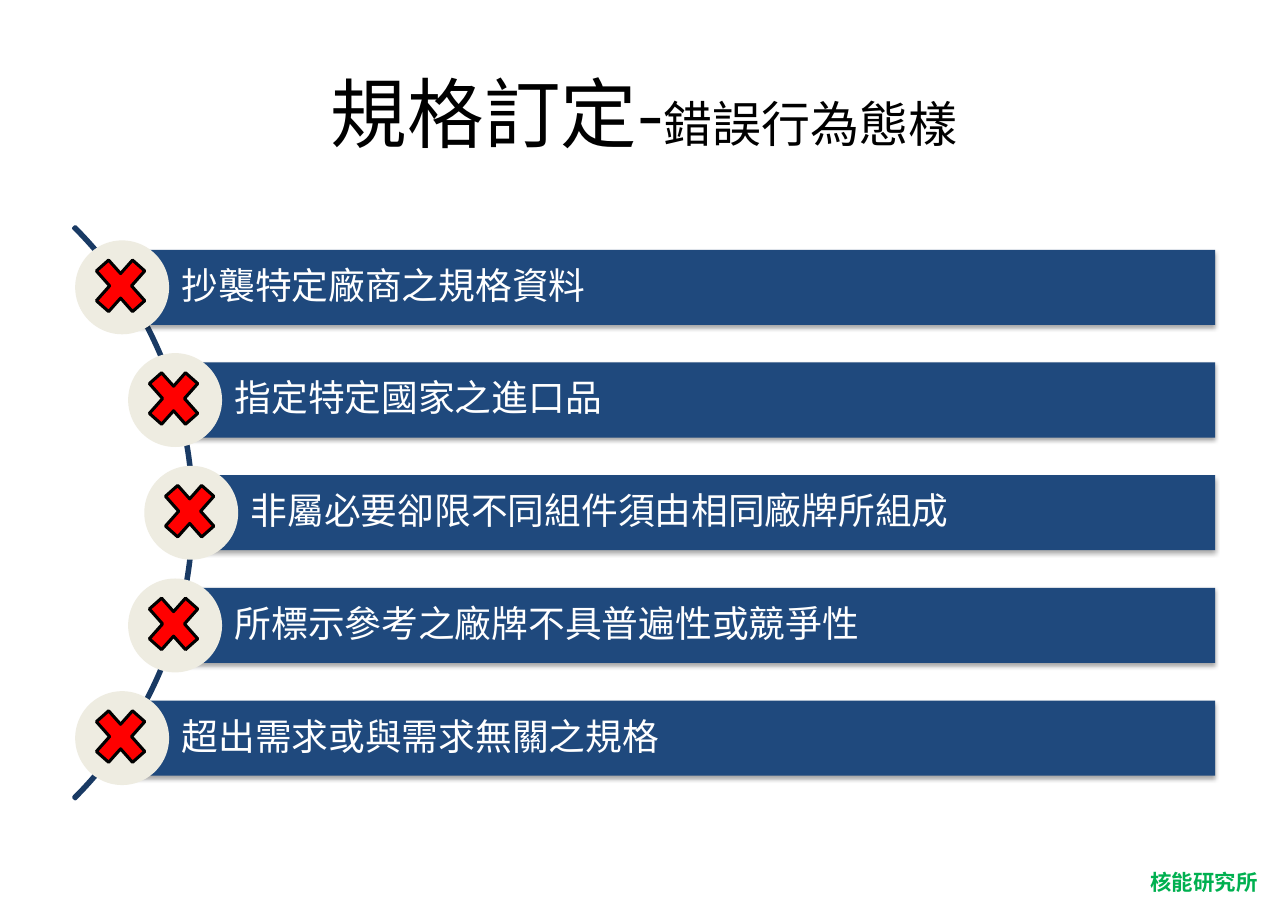
from math import sqrt

from pptx import Presentation
from pptx.dml.color import RGBColor
from pptx.enum.shapes import MSO_SHAPE as Shape
from pptx.enum.text import MSO_ANCHOR as Anchor, MSO_AUTO_SIZE as AutoSize, PP_ALIGN as Align
from pptx.oxml import parse_xml
from pptx.oxml.ns import nsdecls, qn
from pptx.util import Inches, Pt

BLACK = RGBColor(0x00, 0x00, 0x00)
WHITE = RGBColor(0xFF, 0xFF, 0xFF)
NAVY = RGBColor(0x1F, 0x49, 0x7D)
DARK_NAVY = RGBColor(0x19, 0x3A, 0x64)
CREAM = RGBColor(0xEE, 0xEC, 0xE1)
RED = RGBColor(0xFF, 0x00, 0x00)
GREEN = RGBColor(0x00, 0xB0, 0x50)

FONT = "Noto Sans CJK SC"
CELL = 0.1705
BAR_HEIGHT, DISC_SIZE, PITCH = 4, 5, 6
BAR_RIGHT = 64.69
CENTER_X, CENTER_Y = -11.23, 27.3
ARC_SIZE, NODE_RADIUS = 43.1, 21.41
MARK_WIDTH, MARK_HEIGHT = 3.7, 4.16

MISTAKES = [
    "抄襲特定廠商之規格資料",
    "指定特定國家之進口品",
    "非屬必要卻限不同組件須由相同廠牌所組成",
    "所標示參考之廠牌不具普遍性或競爭性",
    "超出需求或與需求無關之規格",
]


def cells(count):
    return Inches(count * CELL)


class SlideBuilder:
    def __init__(self, slide):
        self.slide = slide

    def run(self, paragraph, text, size, color, bold=False):
        run = paragraph.add_run()
        run.text = text
        font = run.font
        font.size, font.bold, font.name = Pt(size), bold, FONT
        font.color.rgb = color
        east_asian = parse_xml(f'<a:ea {nsdecls("a")} typeface="{FONT}"/>')
        font._element.find(qn("a:latin")).addnext(east_asian)

    def title(self, runs):
        shape = self.slide.shapes.title
        shape.left, shape.top = cells(3.43), cells(1.94)
        shape.width, shape.height = cells(61.76), cells(8.08)
        frame = shape.text_frame
        frame.vertical_anchor = Anchor.MIDDLE
        frame.margin_left = frame.margin_right = Inches(0.11)
        frame.margin_top = frame.margin_bottom = Inches(0.06)
        paragraph = frame.paragraphs[0]
        paragraph.alignment = Align.CENTER
        for text, size in runs:
            self.run(paragraph, text, size, BLACK)

    def shape(self, kind, left, top, width, height, fill=None, line=None):
        shape = self.slide.shapes.add_shape(
            kind, cells(left), cells(top), cells(width), cells(height))
        shape.shadow.inherit = False
        if fill is None:
            shape.fill.background()
        else:
            shape.fill.solid()
            shape.fill.fore_color.rgb = fill
        if line is None:
            shape.line.fill.background()
        else:
            shape.line.color.rgb = line
            shape.line.width = Pt(2)
        return shape

    def arc(self):
        half = ARC_SIZE / 2
        shape = self.shape(Shape.BLOCK_ARC, CENTER_X - half, CENTER_Y - half,
                           ARC_SIZE, ARC_SIZE, line=DARK_NAVY)
        for index, value in enumerate((189, 27, 0.003)):
            shape.adjustments[index] = value

    def bar(self, left, middle, text):
        shape = self.shape(Shape.RECTANGLE, left, middle - BAR_HEIGHT / 2,
                           BAR_RIGHT - left, BAR_HEIGHT, NAVY)
        shape._element.spPr.find(qn("a:effectLst")).append(parse_xml(
            f'<a:outerShdw {nsdecls("a")} blurRad="{Pt(3.1)}" dist="{Pt(1.8)}" '
            f'dir="5400000" rotWithShape="0"><a:srgbClr val="{BLACK}">'
            '<a:alpha val="35000"/></a:srgbClr></a:outerShdw>'))
        frame = shape.text_frame
        frame.word_wrap = True
        frame.vertical_anchor = Anchor.MIDDLE
        frame.margin_left = Inches(0.54)
        frame.margin_right = frame.margin_top = frame.margin_bottom = Inches(0.07)
        paragraph = frame.paragraphs[0]
        paragraph.alignment = Align.LEFT
        paragraph.line_spacing = 0.9
        self.run(paragraph, text, 24, WHITE)

    def disc(self, x, y):
        self.shape(Shape.OVAL, x - DISC_SIZE / 2, y - DISC_SIZE / 2,
                   DISC_SIZE, DISC_SIZE, CREAM)

    def cross(self, x, y):
        self.shape(Shape.MATH_MULTIPLY, x - MARK_WIDTH / 2, y - MARK_HEIGHT / 2,
                   MARK_WIDTH, MARK_HEIGHT, RED, BLACK)

    def footer(self, text):
        box = self.slide.shapes.add_textbox(
            cells(60.65), cells(45.98), cells(6.92), cells(1.99))
        frame = box.text_frame
        frame.word_wrap = False
        frame.auto_size = AutoSize.SHAPE_TO_FIT_TEXT
        self.run(frame.paragraphs[0], text, 14, GREEN, bold=True)


def main():
    presentation = Presentation()
    presentation.slide_width = Inches(11.69)
    presentation.slide_height = Inches(8.27)
    builder = SlideBuilder(presentation.slides.add_slide(presentation.slide_layouts[5]))
    builder.footer("核能研究所")
    builder.title([("規格訂定-", 50), ("錯誤行為態樣", 32)])
    builder.arc()
    for index, mistake in enumerate(MISTAKES):
        offset = (index - len(MISTAKES) // 2) * PITCH
        x = CENTER_X + sqrt(NODE_RADIUS ** 2 - offset ** 2)
        y = CENTER_Y + offset
        builder.bar(x, y, mistake)
        builder.disc(x, y)
        builder.cross(x - 0.08, y - 0.08)
    presentation.save("out.pptx")


if __name__ == "__main__":
    main()
